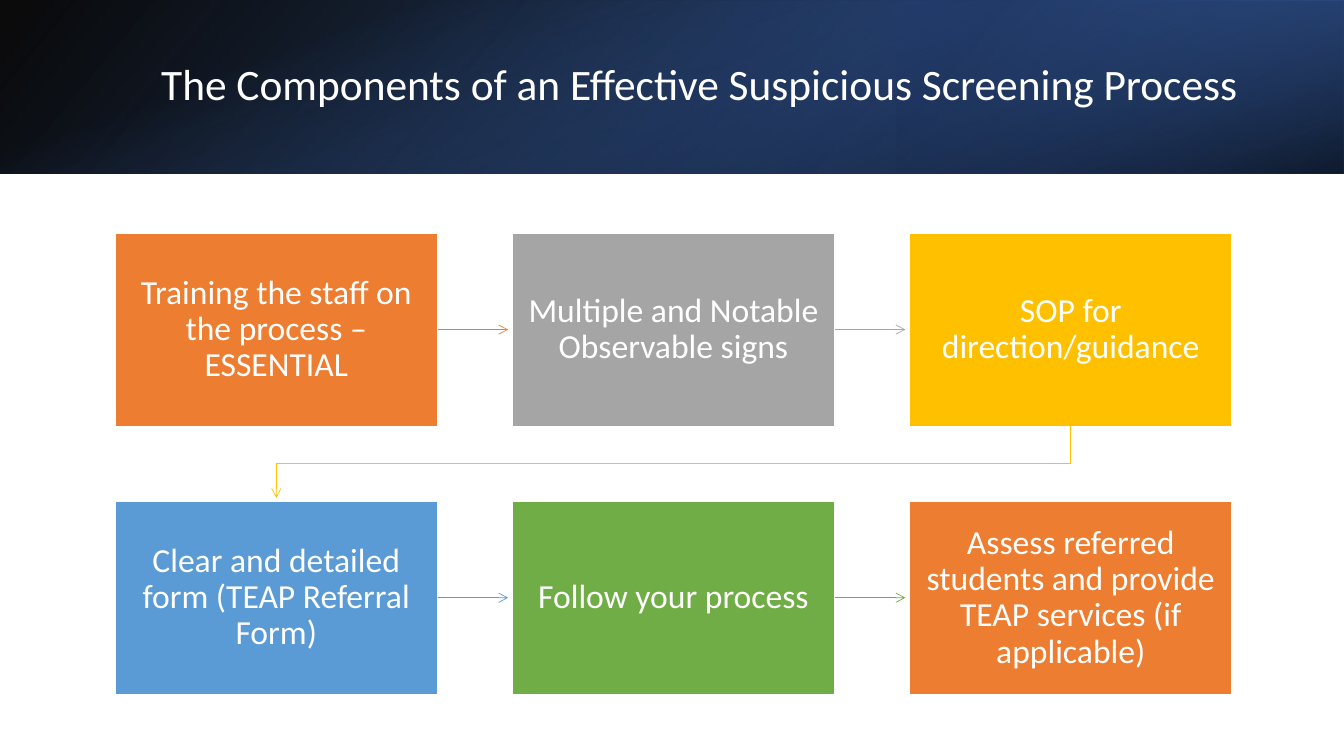
from lxml import etree
from pptx import Presentation
from pptx.dml.color import RGBColor
from pptx.enum.shapes import MSO_CONNECTOR, MSO_SHAPE
from pptx.enum.text import MSO_ANCHOR, PP_ALIGN
from pptx.oxml.ns import qn
from pptx.util import Inches, Pt

RECTANGLE = MSO_SHAPE.RECTANGLE
STRAIGHT = MSO_CONNECTOR.STRAIGHT
MIDDLE = MSO_ANCHOR.MIDDLE
LEFT, CENTER = PP_ALIGN.LEFT, PP_ALIGN.CENTER

WHITE, ORANGE, GRAY = "FFFFFF", "ED7D31", "A5A5A5"
GOLD, BLUE, GREEN = "FFC000", "5B9BD5", "70AD47"

BANNER_HEIGHT = 1.72
STEP_WIDTH, STEP_HEIGHT = 3.2, 1.92
FIRST_LEFT, FIRST_TOP = 1.14, 2.31
COLUMN_PITCH, ROW_PITCH = 3.94, 2.66
COLUMNS = 3
ARROW_LENGTH = 0.7

STEPS = [
    ("Training the staff on the process – ESSENTIAL", ORANGE),
    ("Multiple and Notable Observable signs", GRAY),
    ("SOP for direction/guidance", GOLD),
    ("Clear and detailed form (TEAP Referral Form)", BLUE),
    ("Follow your process", GREEN),
    ("Assess referred students and provide TEAP services (if applicable)", ORANGE),
]


def color(value):
    return RGBColor.from_string(value)


class ProcessSlide:
    """Draws the elements of a process slide in one shared style."""

    font = "Calibri"

    def __init__(self, slide):
        self.shapes = slide.shapes

    def set_text(self, frame, text, size, align, inset):
        frame.word_wrap = True
        frame.vertical_anchor = MIDDLE
        frame.margin_left = frame.margin_right = Inches(inset)
        frame.margin_top = frame.margin_bottom = Inches(inset)
        paragraph = frame.paragraphs[0]
        paragraph.alignment = align
        paragraph.line_spacing = 0.9
        run = paragraph.add_run()
        run.text = text
        run.font.name = self.font
        run.font.size = Pt(size)
        run.font.color.rgb = color(WHITE)

    def title(self, text, left, top, width, height):
        box = self.shapes.add_textbox(*map(Inches, (left, top, width, height)))
        self.set_text(box.text_frame, text, 31, LEFT, 0.1)

    def gradient(self, bounds, stops, angle, rotation=0, flipped=False):
        band = self.shapes.add_shape(RECTANGLE, *map(Inches, bounds))
        band.shadow.inherit = False
        band.line.fill.background()
        band.rotation = rotation
        properties = band._element.spPr
        if flipped:
            properties.xfrm.set("flipH", "1")
        fill = etree.Element(qn("a:gradFill"), rotWithShape="1")
        stop_list = etree.SubElement(fill, qn("a:gsLst"))
        for position, value, opacity in stops:
            stop = etree.SubElement(stop_list, qn("a:gs"), pos=str(position * 1000))
            tint = etree.SubElement(stop, qn("a:srgbClr"), val=value)
            etree.SubElement(tint, qn("a:alpha"), val=str(opacity * 1000))
        etree.SubElement(fill, qn("a:lin"), ang=str(angle * 60000), scaled="0")
        properties.find(qn("a:prstGeom")).addnext(fill)

    def step(self, text, fill, left, top):
        box = self.shapes.add_shape(
            RECTANGLE, *map(Inches, (left, top, STEP_WIDTH, STEP_HEIGHT)))
        box.shadow.inherit = False
        box.fill.solid()
        box.fill.fore_color.rgb = color(fill)
        box.line.color.rgb = color(WHITE)
        box.line.width = Pt(1)
        self.set_text(box.text_frame, text, 24, CENTER, 0.16)

    def point(self, line, stroke):
        line.line.color.rgb = color(stroke)
        line.line.width = Pt(0.5)
        etree.SubElement(line.line._get_or_add_ln(), qn("a:tailEnd"), type="arrow")

    def arrow(self, left, y, stroke):
        line = self.shapes.add_connector(
            STRAIGHT, *map(Inches, (left, y, left + ARROW_LENGTH, y)))
        self.point(line, stroke)
        etree.SubElement(line._element.spPr, qn("a:effectLst"))

    def bent_arrow(self, points, stroke):
        start, *bends = [(Inches(x), Inches(y)) for x, y in points]
        builder = self.shapes.build_freeform(*start)
        builder.add_line_segments(bends, close=False)
        line = builder.convert_to_shape()
        line.fill.background()
        line.shadow.inherit = False
        self.point(line, stroke)


def main():
    deck = Presentation()
    deck.slide_width, deck.slide_height = Inches(13.33), Inches(7.5)
    page = ProcessSlide(deck.slides.add_slide(deck.slide_layouts[6]))

    page.gradient((0, 0, 13.33, BANNER_HEIGHT),
                  [(0, "000000", 96), (100, "2F5597", 100)], 140, flipped=True)
    page.gradient((8.89, 0, 4.44, BANNER_HEIGHT),
                  [(19, "203864", 68), (100, "4472C4", 79)], 320, 180, True)
    page.gradient((5.8, -5.8, BANNER_HEIGHT, 13.33),
                  [(23, "4472C4", 0), (99, "000000", 74)], 340, 90)
    page.title("The Components of an Effective Suspicious Screening Process",
               1.5, 0.38, 10.98, 0.96)

    for index, (text, fill) in enumerate(STEPS):
        row, column = divmod(index, COLUMNS)
        left = FIRST_LEFT + column * COLUMN_PITCH
        top = FIRST_TOP + row * ROW_PITCH
        page.step(text, fill, left, top)
        if column < COLUMNS - 1:
            page.arrow(left + STEP_WIDTH, top + STEP_HEIGHT / 2, fill)

    first_center = FIRST_LEFT + STEP_WIDTH / 2
    last_center = first_center + (COLUMNS - 1) * COLUMN_PITCH
    row_bottom = FIRST_TOP + STEP_HEIGHT
    turn = row_bottom + (ROW_PITCH - STEP_HEIGHT) / 2
    page.bent_arrow([(last_center, row_bottom), (last_center, turn),
                     (first_center, turn), (first_center, 4.94)], GOLD)

    deck.save("out.pptx")


if __name__ == "__main__":
    main()
